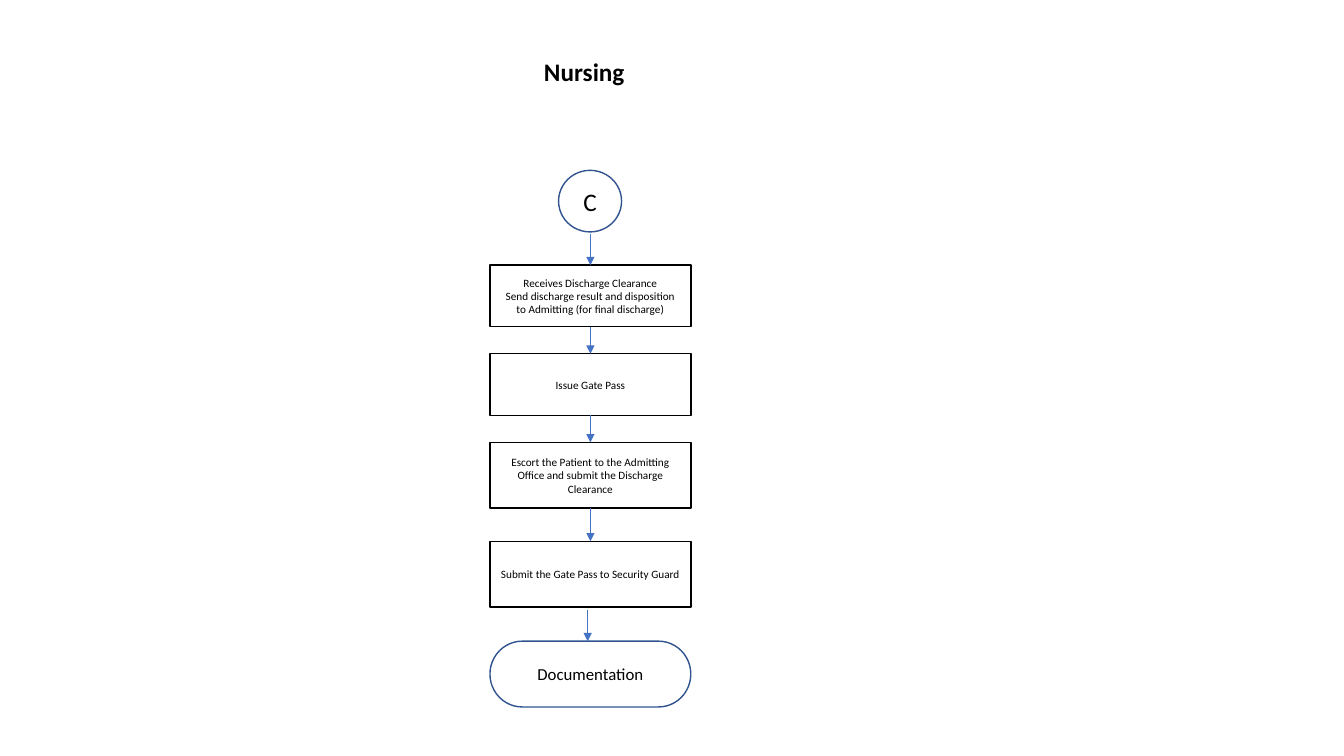
from itertools import pairwise

from lxml.etree import SubElement
from pptx import Presentation
from pptx.dml.color import RGBColor
from pptx.enum.shapes import MSO_CONNECTOR as Link, MSO_SHAPE as Shape
from pptx.enum.text import MSO_ANCHOR as Anchor, PP_ALIGN as Align
from pptx.oxml.ns import qn
from pptx.util import Pt

BLACK, WHITE, NAVY, BLUE = "000000", "FFFFFF", "31538F", "4472C4"
TOP, BOTTOM = 0, 2


def color(value):
    return RGBColor.from_string(value)


class FlowPage:
    """Holds the text style and the slide being drawn."""

    font = {"name": "Calibri", "bold": False}

    def __init__(self, page):
        self.page = page

    def add_lines(self, frame, lines, **style):
        frame.word_wrap = True
        for number, line in enumerate(lines):
            para = frame.add_paragraph() if number else frame.paragraphs[0]
            para.alignment = Align.CENTER
            span = para.add_run()
            span.text = line
            for name, value in (self.font | style).items():
                setattr(span.font, name, value)
            span.font.color.rgb = color(BLACK)

    def title(self, text, left, top, width, height):
        box = self.page.shapes.add_textbox(Pt(left), Pt(top), Pt(width), Pt(height))
        self.add_lines(box.text_frame, [text], size=Pt(18), bold=True)

    def node(self, kind, lines, left, top, width, height, size, line, fill=None):
        box = self.page.shapes.add_shape(kind, Pt(left), Pt(top), Pt(width), Pt(height))
        box.shadow.inherit = False
        if fill:
            box.fill.solid()
            box.fill.fore_color.rgb = color(fill)
        else:
            box.fill.background()
        box.line.color.rgb = color(line)
        box.line.width = Pt(1)
        box.text_frame.vertical_anchor = Anchor.MIDDLE
        self.add_lines(box.text_frame, lines, size=Pt(size))
        return box

    def arrow(self, x, start, end, source=None, target=None):
        arrow = self.page.shapes.add_connector(
            Link.STRAIGHT, Pt(x), Pt(start), Pt(x), Pt(end))
        if source:
            arrow.begin_connect(source, BOTTOM)
        if target:
            arrow.end_connect(target, TOP)
        arrow.line.color.rgb = color(BLUE)
        arrow.line.width = Pt(0.75)
        properties = arrow.element.spPr
        SubElement(properties.find(qn("a:ln")), qn("a:tailEnd"), type="triangle")
        SubElement(properties, qn("a:effectLst"))


def main():
    deck = Presentation()
    deck.slide_width, deck.slide_height = Pt(960), Pt(540)
    flow = FlowPage(deck.slides.add_slide(deck.slide_layouts[6]))

    # Heading and entry point
    flow.title("Nursing ", 31.7, 36.7, 775.4, 29)
    flow.node(Shape.FLOWCHART_CONNECTOR, ["C"], 399, 121.7, 45, 44, 18, NAVY)

    # Process steps: top, height, lines
    left, width = 350, 143.5
    steps = [
        (189.4, 44, ["Receives Discharge Clearance",
                     "Send discharge result and disposition to Admitting "
                     "(for final discharge)"]),
        (252.7, 44, ["Issue Gate Pass"]),
        (316, 47, ["Escort the Patient to the Admitting Office and submit "
                   "the Discharge Clearance"]),
        (386.7, 47, ["Submit the Gate Pass to Security Guard"]),
    ]
    boxes = [flow.node(Shape.FLOWCHART_PROCESS, lines, left, top, width, height,
                       8, BLACK, WHITE)
             for top, height, lines in steps]

    # End point
    end_top = 458
    flow.node(Shape.FLOWCHART_TERMINATOR, ["Documentation"],
              left, end_top, width, 47, 12, NAVY)

    # Arrows
    middle = left + width / 2
    flow.arrow(middle, 167, steps[0][0], target=boxes[0])
    for source, target in pairwise(boxes):
        flow.arrow(middle, 0, 0, source, target)
    flow.arrow(419.8, 435.6, end_top)

    deck.save("out.pptx")


if __name__ == "__main__":
    main()
